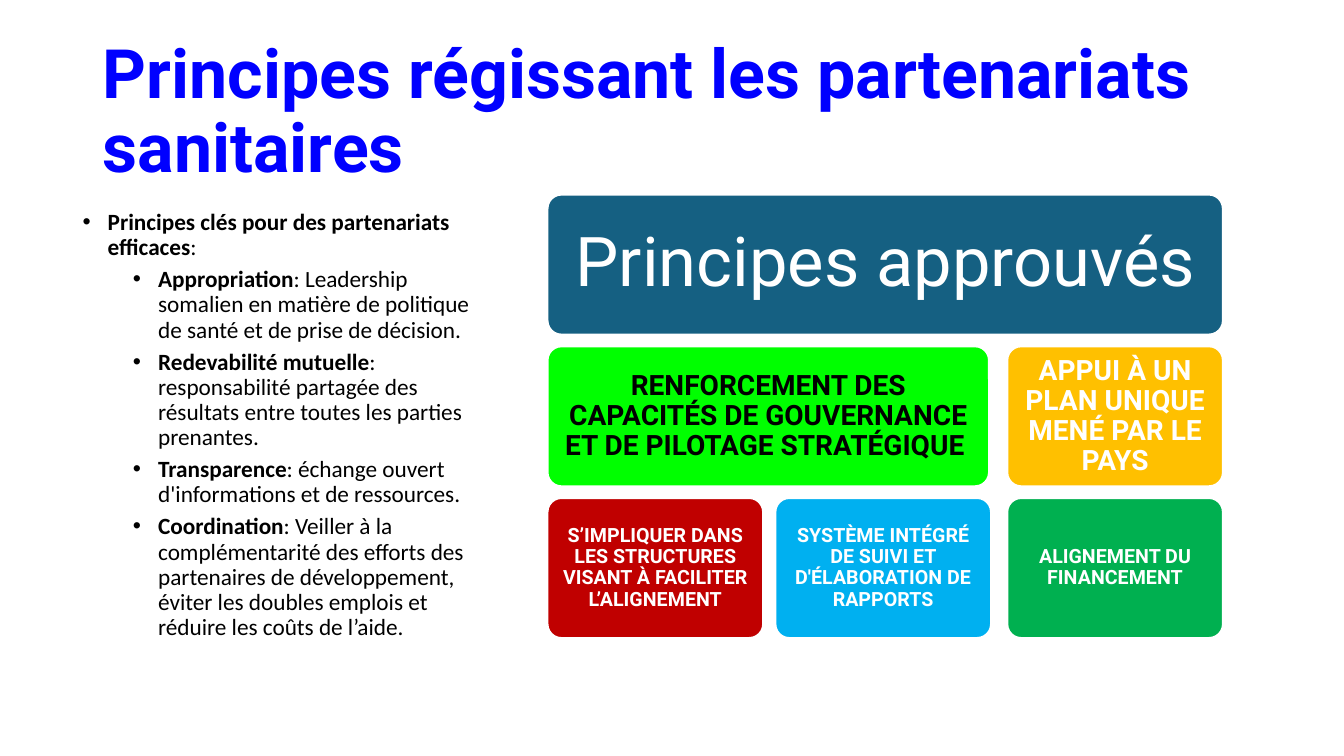
from dataclasses import dataclass

import pptx
import pptx.dml.color
import pptx.enum.shapes
import pptx.enum.text
import pptx.oxml
import pptx.util
from lxml import etree

Inches = pptx.util.Inches
Pt = pptx.util.Pt
Align = pptx.enum.text.PP_ALIGN
Anchor = pptx.enum.text.MSO_ANCHOR


@dataclass(frozen=True)
class Theme:
    heading_font: str = "Roboto"
    body_font: str = "Calibri"
    title_size: float = 48.6
    body_size: float = 16.6
    banner_size: float = 49
    large_size: float = 20
    small_size: float = 14
    title_color: str = "0000FF"
    black: str = "000000"
    white: str = "FFFFFF"
    teal: str = "156082"
    lime: str = "00FF00"
    amber: str = "FFC000"
    red: str = "C00000"
    sky: str = "00B0F0"
    green: str = "00B050"


@dataclass(frozen=True)
class Box:
    left: float
    top: float
    width: float
    height: float

    def lengths(self):
        return [Inches(value) for value in (self.left, self.top, self.width, self.height)]


THEME = Theme()

PRINCIPLES = [
    (0, "Principes clés pour des partenariats efficaces", ":"),
    (1, "Appropriation", ": Leadership somalien en matière de politique de santé et de prise de décision."),
    (1, "Redevabilité mutuelle", ": responsabilité partagée des résultats entre toutes les parties prenantes."),
    (1, "Transparence", ": échange ouvert d'informations et de ressources."),
    (1, "Coordination", ": Veiller à la complémentarité des efforts des partenaires de développement, "
        "éviter les doubles emplois et réduire les coûts de l’aide."),
]


def apply(target, values):
    for name, value in values.items():
        setattr(target, name, value)


def add_span(para, text, font, size, color, bold):
    span = para.add_run()
    span.text = text
    apply(span.font, {"name": font, "size": Pt(size), "bold": bold})
    span.font.color.rgb = pptx.dml.color.RGBColor.from_string(color)


def add_title(page, box, text):
    title = page.shapes.title
    apply(title, dict(zip(("left", "top", "width", "height"), box.lengths())))
    apply(title.text_frame, {"word_wrap": True, "vertical_anchor": Anchor.MIDDLE,
                             "auto_size": pptx.enum.text.MSO_AUTO_SIZE.NONE})
    para = title.text_frame.paragraphs[0]
    apply(para, {"alignment": Align.LEFT, "line_spacing": 0.9})
    add_span(para, text, THEME.heading_font, THEME.title_size, THEME.title_color, True)


def add_bullet(para, level):
    properties = para._p.get_or_add_pPr()
    properties.set("marL", str(Inches(0.25 + 0.5 * level)))
    properties.set("indent", str(Inches(-0.25)))
    for tag, name, value in (("a:buFont", "typeface", "Arial"), ("a:buChar", "char", "•")):
        etree.SubElement(properties, pptx.oxml.ns.qn(tag)).set(name, value)


def add_principles(page, box):
    frame = page.shapes.add_textbox(*box.lengths()).text_frame
    frame.word_wrap = True
    for index, (level, term, detail) in enumerate(PRINCIPLES):
        para = frame.add_paragraph() if index else frame.paragraphs[0]
        apply(para, {"level": level, "line_spacing": 0.9, "space_before": Pt(5 if level else 10)})
        add_bullet(para, level)
        for text, bold in ((term, True), (detail, False)):
            add_span(para, text, THEME.body_font, THEME.body_size, THEME.black, bold)


def add_tile(page, box, text, fill, size, inset, color=THEME.white, bold=True):
    tile = page.shapes.add_shape(pptx.enum.shapes.MSO_SHAPE.ROUNDED_RECTANGLE, *box.lengths())
    tile.adjustments[0] = 0.1
    tile.shadow.inherit = False
    tile.fill.solid()
    tile.fill.fore_color.rgb = pptx.dml.color.RGBColor.from_string(fill)
    tile.line.color.rgb = pptx.dml.color.RGBColor.from_string(THEME.white)
    tile.line.width = Pt(1.5)
    margins = {f"margin_{side}": Inches(inset) for side in ("left", "top", "right", "bottom")}
    apply(tile.text_frame, {**margins, "word_wrap": True, "vertical_anchor": Anchor.MIDDLE})
    para = tile.text_frame.paragraphs[0]
    apply(para, {"alignment": Align.CENTER, "line_spacing": 0.9})
    add_span(para, text, THEME.heading_font, size, color, bold)


def add_tile_grid(page, box):
    tile_width, tile_height = 2.14, 1.39
    pitch = (box.height - tile_height) / 2
    first, second, third = (box.top + pitch * row for row in range(3))
    middle = box.left + 2.26
    right = box.left + box.width - tile_width

    add_tile(page, Box(box.left, first, box.width, tile_height), "Principes approuvés",
             THEME.teal, THEME.banner_size, 0.2, bold=False)
    add_tile(page, Box(box.left, second, 4.38, tile_height),
             "RENFORCEMENT DES CAPACITÉS DE GOUVERNANCE ET DE PILOTAGE STRATÉGIQUE ",
             THEME.lime, THEME.large_size, 0.08, color=THEME.black)
    add_tile(page, Box(right, second, tile_width, tile_height),
             "APPUI À UN PLAN UNIQUE MENÉ PAR LE PAYS", THEME.amber, THEME.large_size, 0.08)
    for left, text, fill in (
        (box.left, "S’IMPLIQUER DANS LES STRUCTURES VISANT À FACILITER L’ALIGNEMENT", THEME.red),
        (middle, "SYSTÈME INTÉGRÉ DE SUIVI ET D'ÉLABORATION DE RAPPORTS", THEME.sky),
        (right, "ALIGNEMENT DU FINANCEMENT", THEME.green),
    ):
        add_tile(page, Box(left, third, tile_width, tile_height), text, fill, THEME.small_size, 0.06)


def main():
    deck = pptx.Presentation()
    apply(deck, {"slide_width": Inches(13.33), "slide_height": Inches(7.5)})
    page = deck.slides.add_slide(deck.slide_layouts.get_by_name("Title Only"))
    add_title(page, Box(0.92, 0.4, 11.5, 1.45), "Principes régissant les partenariats sanitaires")
    add_principles(page, Box(0.72, 2.04, 4.18, 4.86))
    add_tile_grid(page, Box(5.43, 1.93, 6.7, 4.4))
    deck.save("out.pptx")


if __name__ == "__main__":
    main()
